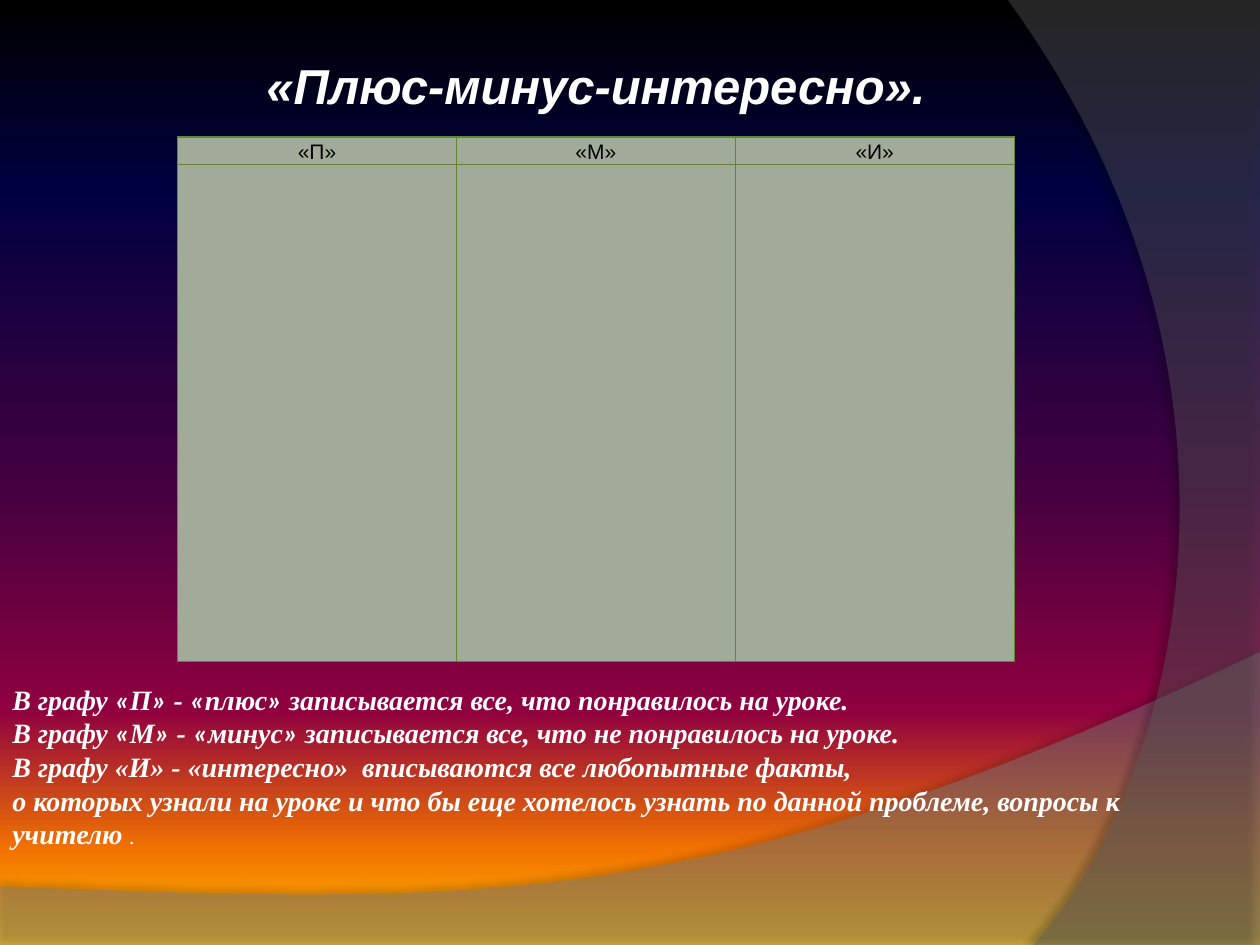
from itertools import groupby

from lxml.etree import SubElement
from pptx import Presentation
from pptx.dml.color import RGBColor
from pptx.enum.text import MSO_ANCHOR, MSO_AUTO_SIZE, PP_ALIGN
from pptx.oxml.ns import qn
from pptx.util import Inches, Pt

WIDTH, HEIGHT = Inches(10), Inches(7.5)
BLACK = RGBColor(0x00, 0x00, 0x00)
WHITE = RGBColor(0xFF, 0xFF, 0xFF)
GREEN = RGBColor(0x5F, 0x88, 0x2F)
SAGE = RGBColor(0xA2, 0xAB, 0x9A)
GRAY = RGBColor(0x7F, 0x7F, 0x7F)
DARK_GRAY = RGBColor(0x5E, 0x5E, 0x5E)
SUNSET = {
    0: BLACK,
    20: RGBColor(0x00, 0x00, 0x40),
    50: RGBColor(0x40, 0x00, 0x40),
    75: RGBColor(0x8F, 0x00, 0x40),
    90: RGBColor(0xF2, 0x73, 0x00),
    100: RGBColor(0xFF, 0xBF, 0x00),
}
HEADINGS = ("«П»", "«М»", "«И»")
MIXED_LINES = (
    "В графу «П» - «плюс» записывается все, что понравилось на уроке.",
    "В графу «М» - «минус» записывается все, что не понравилось на уроке.",
)
PLAIN_LINES = (
    "В графу «И» - «интересно»  вписываются все любопытные факты,",
    "о которых узнали на уроке и что бы еще хотелось узнать по данной проблеме, вопросы к учителю ",
)
TITLE_FORMAT = {"name": "Arial", "size": Pt(28), "bold": True, "italic": True}
HEADING_FORMAT = {"name": "Arial", "size": Pt(12), "bold": False}
NOTE_FORMAT = {"name": "Times New Roman", "size": Pt(16), "bold": True, "italic": True}
QUOTE_FORMAT = NOTE_FORMAT | {"name": "Calibri"}
STOP_FORMAT = NOTE_FORMAT | {"size": Pt(12), "bold": False}


def place(box):
    """Turn shares of the slide into left, top, width and height."""
    left, top, width, height = box
    return int(left * WIDTH), int(top * HEIGHT), int(width * WIDTH), int(height * HEIGHT)


def add_color(parent, color, opacity=100):
    """Append a colour element with its opacity in percent."""
    element = SubElement(parent, qn("a:srgbClr"), val=str(color))
    if opacity < 100:
        SubElement(element, qn("a:alpha"), val=str(opacity * 1000))


def add_span(para, text, values, color):
    """Append a formatted run to a paragraph."""
    span = para.add_run()
    span.text = text
    for name, value in values.items():
        setattr(span.font, name, value)
    span.font.color.rgb = color


def paint_background(page):
    """Fill the page with the vertical sunset gradient."""
    fill = page.background.fill
    fill.gradient()
    fill.gradient_angle = 270
    stops = next(page.element.iter(qn("a:gsLst")))
    for stop in list(stops):
        stops.remove(stop)
    for position, color in SUNSET.items():
        add_color(SubElement(stops, qn("a:gs"), pos=str(position * 1000)), color)


def curve(start, first, second, end, steps=60):
    """Return points along a cubic curve."""
    points = []
    for step in range(steps + 1):
        t = step / steps
        weights = ((1 - t) ** 3, 3 * t * (1 - t) ** 2, 3 * t**2 * (1 - t), t**3)
        points.append(tuple(
            sum(weight * value for weight, value in zip(weights, axis))
            for axis in zip(start, first, second, end)
        ))
    return points


def add_wave(page, box, points, color, opacity, shadow):
    """Draw a translucent wave whose points are shares of its box."""
    left, top, width, height = place(box)
    spots = [(left + x * width, top + y * height) for x, y in points]
    builder = page.shapes.build_freeform(*spots[0])
    builder.add_line_segments(spots[1:], close=True)
    wave = builder.convert_to_shape()
    wave.shadow.inherit = False
    wave.line.fill.background()
    wave.fill.solid()
    wave.fill.fore_color.rgb = color
    properties = wave.element.spPr
    tint = properties.find(qn("a:solidFill")).find(qn("a:srgbClr"))
    SubElement(tint, qn("a:alpha"), val=str(opacity * 1000))
    strength, blur, distance, angle = shadow
    cast = SubElement(
        properties.find(qn("a:effectLst")), qn("a:outerShdw"),
        blurRad=str(Pt(blur)), dist=str(Pt(distance)),
        dir=str(angle * 60000), algn="ctr", rotWithShape="0",
    )
    add_color(cast, BLACK, strength)


def style_cell(cell):
    """Give a cell its fill, margins and four borders."""
    sides = {"margin_left": 0.06, "margin_right": 0.06, "margin_top": 0, "margin_bottom": 0}
    for name, value in sides.items():
        setattr(cell, name, Inches(value))
    properties = cell._tc.get_or_add_tcPr()
    for side in ("lnL", "lnR", "lnT", "lnB"):
        border = SubElement(properties, qn(f"a:{side}"), w=str(Pt(0.75)))
        add_color(SubElement(border, qn("a:solidFill")), GREEN)
    cell.fill.solid()
    cell.fill.fore_color.rgb = SAGE


def add_grid(page, box):
    """Place the three-column table with its heading row."""
    left, top, width, height = place(box)
    table = page.shapes.add_table(2, len(HEADINGS), left, top, width, height).table
    table.first_row = table.horz_banding = False
    table.rows[0].height = int(height * 0.05)
    table.rows[1].height = height - table.rows[0].height
    for column in table.columns:
        column.width = width // len(HEADINGS)
    for cell in table.iter_cells():
        style_cell(cell)
    for cell, heading in zip(table.rows[0].cells, HEADINGS):
        para = cell.text_frame.paragraphs[0]
        para.alignment = PP_ALIGN.CENTER
        para.line_spacing = 1.15
        add_span(para, heading, HEADING_FORMAT, BLACK)


def add_frame(page, box, anchor):
    """Place a wrapping text box and return its text frame."""
    frame = page.shapes.add_textbox(*place(box)).text_frame
    frame.word_wrap = True
    frame.auto_size = MSO_AUTO_SIZE.SHAPE_TO_FIT_TEXT
    frame.vertical_anchor = anchor
    return frame


def add_title(page, box):
    """Place the centred title."""
    para = add_frame(page, box, MSO_ANCHOR.TOP).paragraphs[0]
    para.alignment = PP_ALIGN.CENTER
    add_span(para, "«Плюс-минус-интересно».", TITLE_FORMAT, WHITE)


def add_notes_text(page, box):
    """Place the explanation of the three columns."""
    frame = add_frame(page, box, MSO_ANCHOR.MIDDLE)
    frame.margin_left = Inches(0.1)
    for index, line in enumerate(MIXED_LINES + PLAIN_LINES):
        para = frame.paragraphs[0] if index == 0 else frame.add_paragraph()
        quotes = "«»" if line in MIXED_LINES else ""
        for quoted, letters in groupby(line, lambda letter: letter in quotes):
            add_span(para, "".join(letters), QUOTE_FORMAT if quoted else NOTE_FORMAT, WHITE)
    add_span(para, ".", STOP_FORMAT, WHITE)


def main():
    """Build the deck and save it."""
    deck = Presentation()
    deck.slide_width, deck.slide_height = WIDTH, HEIGHT
    page = deck.slides.add_slide(deck.slide_layouts[6])
    paint_background(page)
    bottom = [(0, 1), (1, 1)] + curve((1, 0), (0.56, 0.9), (0.39, 0.86), (0, 0.8))
    side = [(1, 0), (1, 1)] + curve((0.1, 1), (0.68, 0.83), (1.09, 0.4), (0, 0))
    add_wave(page, (0, 0.69, 1, 0.31), bottom, GRAY, 45, (35, 4, 3.5, 270))
    add_wave(page, (0.8, 0, 0.2, 1), side, DARK_GRAY, 40, (45, 4, 4, 180))
    add_grid(page, (0.141, 0.145, 0.664, 0.554))
    add_title(page, (0.18, 0.052, 0.586, 0.076))
    add_notes_text(page, (0, 0.719, 1, 0.184))
    deck.save("out.pptx")


if __name__ == "__main__":
    main()
